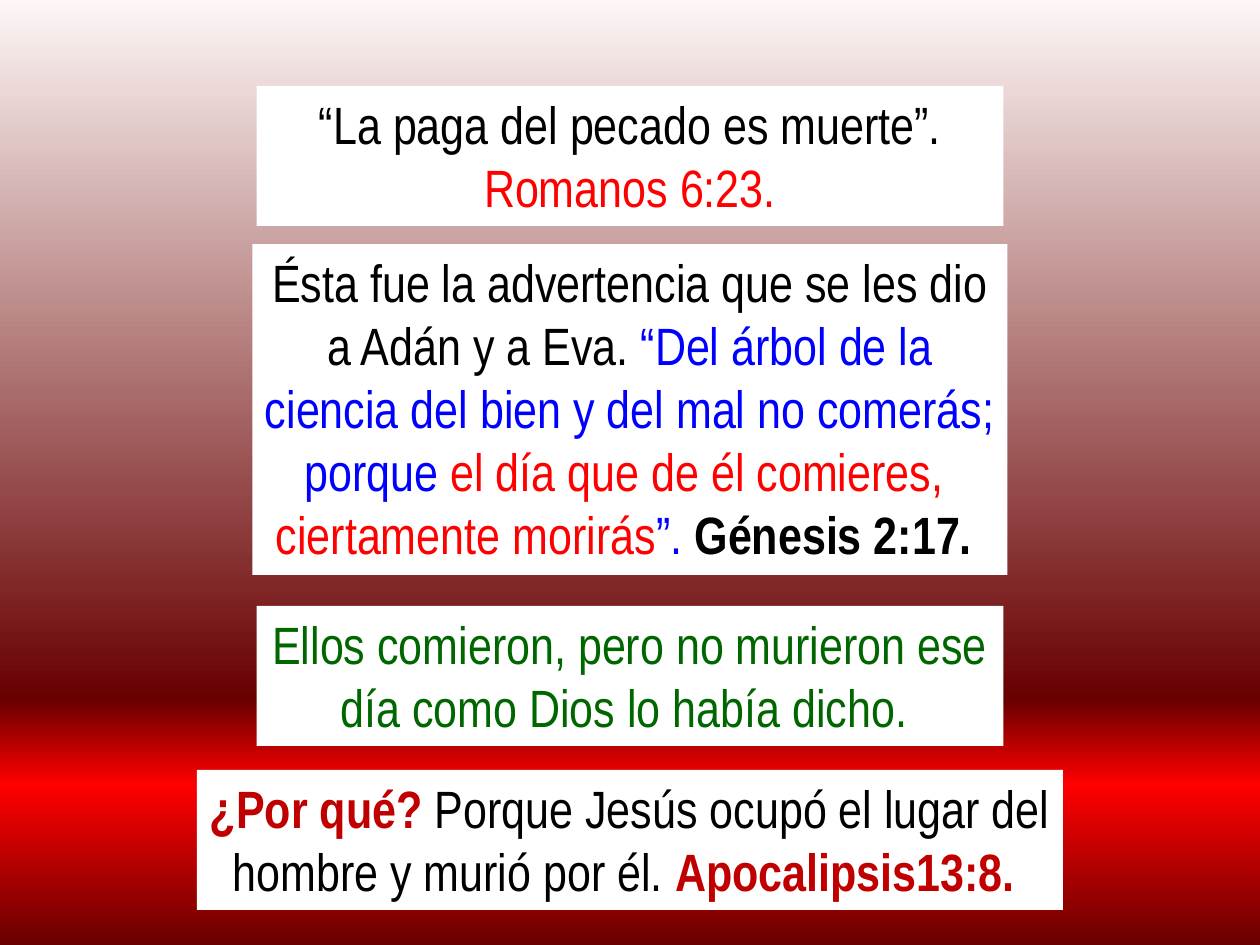
from dataclasses import dataclass

from lxml import etree
from pptx import Presentation
from pptx import util as u
from pptx.dml.color import RGBColor
from pptx.enum import text
from pptx.oxml.ns import qn

SCALE = 914400 / 126
SLIDE_WIDTH, SLIDE_HEIGHT = 1260, 945


@dataclass(frozen=True)
class Theme:
    font: str = "Arial Narrow"
    size: int = 30
    panel: str = "FFFFFF"
    black: str = "000000"
    red: str = "FF0000"
    blue: str = "0000FF"
    green: str = "006600"
    crimson: str = "C00000"
    thick: float = 1.5
    thin: float = 0.25
    background: tuple = ((0, "FDF7F6"), (74, "680000"), (83, "FF0000"), (100, "680000"))


THEME = Theme()


def px(length):
    return u.Emu(round(length * SCALE))


def add_color(parent, color):
    etree.SubElement(parent, qn("a:srgbClr"), val=color)


def paint_background(slide):
    fill = slide.background.fill
    fill.gradient()
    fill.gradient_angle = 270
    stops = slide.background._cSld.find(".//" + qn("a:gsLst"))
    for stop in list(stops):
        stops.remove(stop)
    for percent, color in THEME.background:
        stop = etree.SubElement(stops, qn("a:gs"), pos=str(percent * 1000))
        add_color(stop, color)


def outline_text(run, color, width):
    line = etree.Element(qn("a:ln"), w=str(u.Pt(width)))
    add_color(etree.SubElement(line, qn("a:solidFill")), color)
    run._r.get_or_add_rPr().insert(0, line)


def add_run(paragraph, words, color, bold=False, outline=THEME.thick):
    run = paragraph.add_run()
    run.text = words
    font_format = {"name": THEME.font, "size": u.Pt(THEME.size), "bold": bold}
    for name, value in font_format.items():
        setattr(run.font, name, value)
    run.font.color.rgb = RGBColor.from_string(color)
    outline_text(run, color, outline)


def add_panel(slide, top, width, height, paragraphs):
    left = (SLIDE_WIDTH - width) / 2
    shape = slide.shapes.add_textbox(px(left), px(top), px(width), px(height))
    shape.fill.solid()
    shape.fill.fore_color.rgb = RGBColor.from_string(THEME.panel)
    frame = shape.text_frame
    frame_format = {"word_wrap": True, "auto_size": text.MSO_AUTO_SIZE.SHAPE_TO_FIT_TEXT}
    for name, value in frame_format.items():
        setattr(frame, name, value)
    for index, runs in enumerate(paragraphs):
        paragraph = frame.add_paragraph() if index else frame.paragraphs[0]
        paragraph.alignment = text.PP_ALIGN.CENTER
        for run in runs:
            add_run(paragraph, *run)


def main():
    presentation = Presentation()
    presentation.slide_width = px(SLIDE_WIDTH)
    presentation.slide_height = px(SLIDE_HEIGHT)
    slide = presentation.slides.add_slide(presentation.slide_layouts[6])
    paint_background(slide)

    wages = [[
        ("“La paga del pecado es muerte”. ", THEME.black),
        ("Romanos 6:23.", THEME.red),
    ]]
    warning = [
        [
            ("Ésta fue la advertencia que se les dio a Adán y a Eva. ", THEME.black),
            ("“Del árbol de la ciencia del bien y del mal no comerás; porque ", THEME.blue),
            ("el día que de él comieres, ", THEME.red),
        ],
        [
            ("ciertamente morirás", THEME.red),
            ("”. ", THEME.blue),
            ("Génesis 2:17. ", THEME.black, True),
        ],
    ]
    outcome = [[
        ("Ellos comieron, pero no murieron ese día como Dios lo había dicho", THEME.green),
        (". ", THEME.green, False, THEME.thin),
    ]]
    reason = [[
        ("¿Por qué? ", THEME.crimson, True, THEME.thin),
        ("Porque Jesús ocupó el lugar del hombre y murió por él. ", THEME.black),
        ("Apocalipsis13:8. ", THEME.crimson, True, THEME.thin),
    ]]

    add_panel(slide, 86, 747, 140, wages)
    add_panel(slide, 244, 755, 331, warning)
    add_panel(slide, 606, 747, 140, outcome)
    add_panel(slide, 770, 866, 140, reason)
    presentation.save("out.pptx")


if __name__ == "__main__":
    main()
